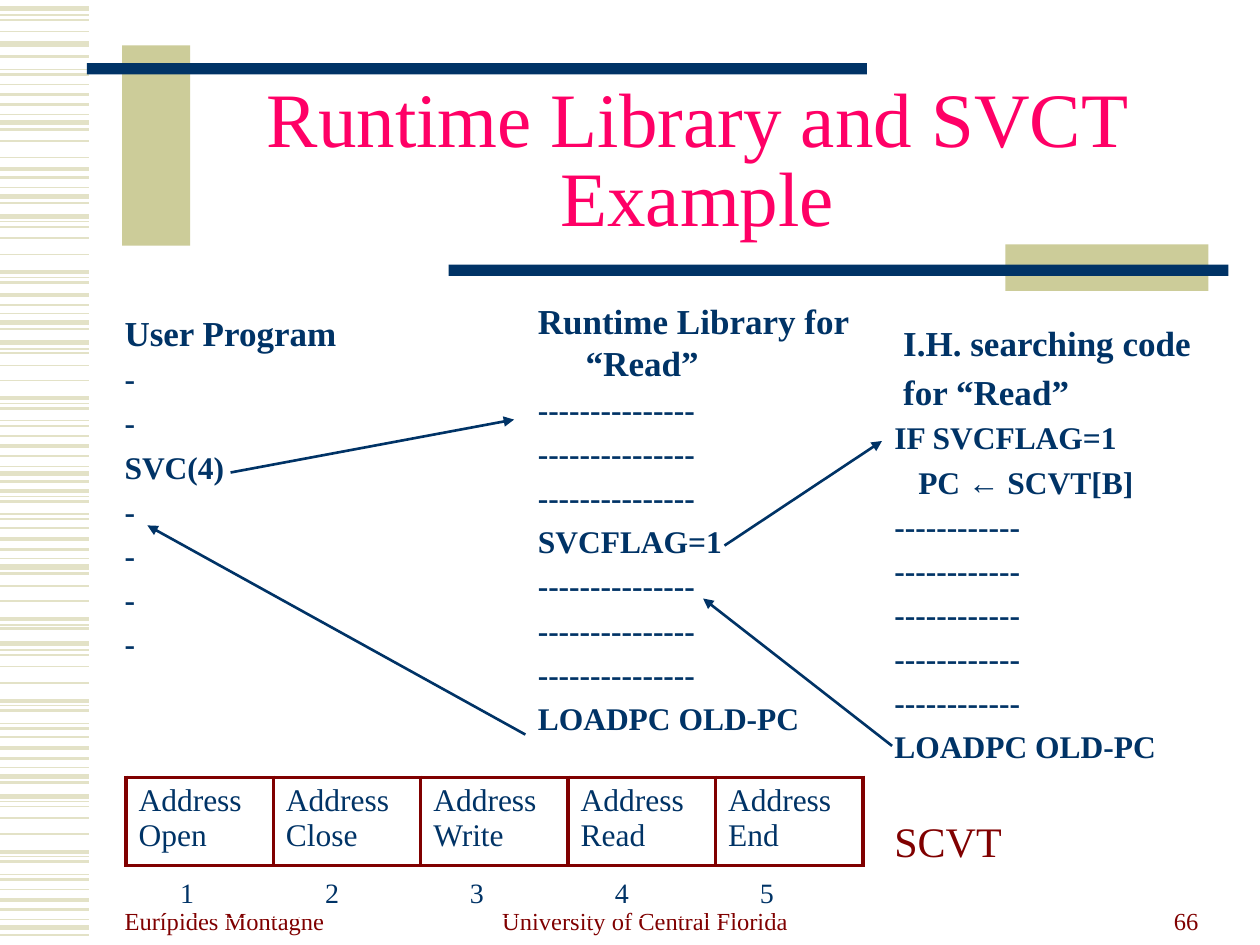
"""Build the slide on the runtime library and the SVCT example."""
from dataclasses import dataclass

from lxml.etree import SubElement
from pptx import Presentation
from pptx.dml.color import RGBColor
from pptx.enum.shapes import MSO_CONNECTOR as Connector, MSO_SHAPE as Shape
from pptx.enum.text import MSO_ANCHOR as Anchor, PP_ALIGN as Align
from pptx.oxml.ns import qn
from pptx.util import Inches, Pt


@dataclass(frozen=True)
class Theme:
    font: str = "Times New Roman"
    navy: str = "003366"
    maroon: str = "800000"
    pink: str = "FF0066"
    khaki: str = "CCCC99"
    pale: str = "E3E2C7"
    white: str = "FFFFFF"
    title: float = 44
    label: float = 24
    heading: float = 20
    code: float = 18
    index: float = 16
    footer: float = 14


@dataclass(frozen=True)
class Bar:
    left: float
    top: float
    width: float
    height: float
    color: str


@dataclass(frozen=True)
class Caption:
    text: str
    left: float
    top: float
    width: float
    height: float
    size: float
    color: str
    align: Align = Align.LEFT
    anchor: Anchor = Anchor.TOP
    line_spacing: float | None = None
    space_before: int = 0


@dataclass(frozen=True)
class Line:
    text: str
    size: float = Theme.code
    offset: float = 0


@dataclass(frozen=True)
class Listing:
    left: float
    top: float
    width: float
    height: float
    lines: list[Line]


@dataclass(frozen=True)
class Grid:
    left: float
    top: float
    column: float
    row: float
    labels: list[str]
    size: float
    border: str
    weight: float


@dataclass(frozen=True)
class Arrow:
    start: tuple[float, float]
    end: tuple[float, float]


THEME = Theme()
HANGING = 0.38
STRIPE_WIDTH = 0.71
STRIPES = {
    0.75: [0.12, 0.55, 0.91, 1.49, 1.76, 2.2, 2.49, 2.77, 3.2, 3.34, 3.7, 3.94,
           4.08, 4.43, 4.96, 5.16, 5.6, 5.74, 6.09, 6.36, 6.8, 6.94, 7.3],
    1: [0.16, 0.25, 0.67, 1.12, 1.25, 1.8, 1.89, 2.02, 2.8, 2.9, 3.02, 3.46,
        4.19, 4.65, 4.77, 5.2, 5.29, 5.42, 5.85, 6.4, 6.49, 6.62, 7.06],
    1.5: [0.45, 0.59, 0.83, 1.03, 1.41, 1.61, 2.24, 2.42, 2.61, 3.24, 3.38, 3.62, 3.82,
          3.98, 4.12, 4.36, 4.55, 4.99, 5.64, 5.78, 6.02, 6.21, 6.84, 6.98, 7.22, 7.42],
    2.25: [0.75, 1.34, 2.16, 2.34, 3.16, 3.54, 3.9, 4.28, 4.91, 5.56, 5.94, 6.76, 7.14],
    3: [0.07, 0.35, 0.97, 1.56, 1.72, 2.56, 2.72, 3.76, 4.5, 5.11, 6.16, 6.32, 7.36],
}
BARS = [
    Bar(0.97, 0.36, 0.54, 1.59, THEME.khaki),
    Bar(0.69, 0.5, 6.19, 0.09, THEME.navy),
    Bar(7.98, 1.94, 1.61, 0.37, THEME.khaki),
    Bar(3.56, 2.1, 6.19, 0.09, THEME.navy),
]
CAPTIONS = [
    Caption("Eurípides Montagne", 0.89, 6.97, 2.08, 0.5, THEME.footer, THEME.maroon,
            anchor=Anchor.BOTTOM),
    Caption("University of Central Florida", 3.43, 6.97, 3.38, 0.5, THEME.footer,
            THEME.maroon, Align.CENTER, Anchor.BOTTOM),
    Caption("66", 7.21, 6.97, 2.4, 0.5, THEME.footer, THEME.maroon, Align.RIGHT,
            Anchor.BOTTOM),
    Caption("Runtime Library and SVCT Example", 1.5, 0.67, 8.07, 1.25, THEME.title,
            THEME.pink, Align.CENTER, Anchor.MIDDLE, 0.85),
    Caption("SCVT", 7, 6.42, 1.75, 0.5, THEME.label, THEME.maroon, space_before=50),
]
DASH = Line("-")
LONG_RULE = Line("-" * 15)
SHORT_RULE = Line("-" * 12)
LOAD = Line("LOADPC OLD-PC")
LISTINGS = [
    Listing(0.89, 2.42, 2.7, 3.24, [
        Line("User Program", THEME.heading), *[DASH] * 2, Line("SVC(4)"), *[DASH] * 4]),
    Listing(4.17, 2.33, 2.68, 4.24, [
        Line("Runtime Library for “Read”", THEME.heading), *[LONG_RULE] * 3,
        Line("SVCFLAG=1"), *[LONG_RULE] * 3, LOAD]),
    Listing(7, 2.5, 2.68, 4.24, [
        Line("I.H. searching code", THEME.heading, 0.07),
        Line("for “Read”", THEME.heading, 0.07), Line("IF SVCFLAG=1"),
        Line("PC ← SCVT[B]", offset=0.19), *[SHORT_RULE] * 5, LOAD]),
]
ACTIONS = ["Open", "Close", "Write", "Read", "End"]
GRIDS = [
    Grid(1, 6.17, 1.17, 0.7, [f"Address {action}" for action in ACTIONS], THEME.code,
         THEME.maroon, 2.25),
    Grid(1.33, 6.92, 1.15, 0.37, [str(number + 1) for number in range(len(ACTIONS))],
         THEME.index, THEME.white, 1),
]
ARROWS = [
    Arrow((1.83, 3.75), (4.08, 3.33)),
    Arrow((5.75, 4.33), (7, 3.5)),
    Arrow((7.08, 5.92), (5.58, 4.75)),
    Arrow((4.17, 5.83), (1.17, 4.17)),
]


def style_para(para, size: float, color: str, before: int = 0, bold: bool = False) -> None:
    """Format the runs and set the space before as a percentage."""
    for span in para.runs:
        span.font.name, span.font.size, span.font.bold = THEME.font, Pt(size), bold
        span.font.color.rgb = RGBColor.from_string(color)
    if before:
        para.space_before = Pt(0)
        spacing = para._p.pPr.find(qn("a:spcBef"))
        spacing.remove(spacing[0])
        SubElement(spacing, qn("a:spcPct"), val=str(before * 1000))


def draw_line(page, start: tuple, end: tuple, color: str, weight: float):
    """Draw a straight line without a shadow."""
    line = page.shapes.add_connector(Connector.STRAIGHT, *map(Inches, (*start, *end)))
    line.line.color.rgb = RGBColor.from_string(color)
    line.line.width = Pt(weight)
    SubElement(line._element.spPr, qn("a:effectLst"))
    return line


def draw_arrow(page, arrow: Arrow) -> None:
    """Draw a line with a triangular head at its end."""
    line = draw_line(page, arrow.start, arrow.end, THEME.navy, 1.5)
    SubElement(line.line._get_or_add_ln(), qn("a:tailEnd"), type="triangle")


def draw_bar(page, bar: Bar) -> None:
    """Draw a plain filled rectangle."""
    shape = page.shapes.add_shape(
        Shape.RECTANGLE, *map(Inches, (bar.left, bar.top, bar.width, bar.height)))
    shape.shadow.inherit = False
    shape.fill.solid()
    shape.fill.fore_color.rgb = RGBColor.from_string(bar.color)
    shape.line.fill.background()


def add_frame(page, area: Caption | Listing):
    """Add a wrapping text box and return its frame."""
    box = page.shapes.add_textbox(
        *map(Inches, (area.left, area.top, area.width, area.height)))
    box.text_frame.word_wrap = True
    return box.text_frame


def draw_caption(page, caption: Caption) -> None:
    """Draw a single paragraph of text."""
    frame = add_frame(page, caption)
    frame.vertical_anchor = caption.anchor
    frame.text = caption.text
    para = frame.paragraphs[0]
    para.alignment, para.line_spacing = caption.align, caption.line_spacing
    style_para(para, caption.size, caption.color, caption.space_before)


def draw_listing(page, listing: Listing) -> None:
    """Draw a column of bold lines with a hanging indent."""
    frame = add_frame(page, listing)
    frame.text = "\n".join(line.text for line in listing.lines)
    for para, line in zip(frame.paragraphs, listing.lines):
        properties = para._p.get_or_add_pPr()
        properties.set("marL", str(Inches(HANGING)))
        properties.set("indent", str(Inches(line.offset - HANGING)))
        style_para(para, line.size, THEME.navy, 20, True)


def draw_grid(page, grid: Grid) -> None:
    """Draw a one-row table with a border around every cell."""
    count = len(grid.labels)
    table = page.shapes.add_table(1, count, *map(
        Inches, (grid.left, grid.top, grid.column * count, grid.row))).table
    table.first_row = table.horz_banding = False
    for cell, label in zip(table.rows[0].cells, grid.labels):
        cell.text = label
        style_para(cell.text_frame.paragraphs[0], grid.size, THEME.navy, 20)
        cell.fill.background()
        properties = cell._tc.get_or_add_tcPr()
        for position, side in enumerate("LRTB"):
            edge = SubElement(properties, qn(f"a:ln{side}"), w=str(Pt(grid.weight)))
            SubElement(SubElement(edge, qn("a:solidFill")), qn("a:srgbClr"), val=grid.border)
            properties.insert(position, edge)


def main() -> None:
    """Build the deck and save it."""
    deck = Presentation()
    deck.slide_width, deck.slide_height = Inches(10), Inches(7.5)
    page = deck.slides.add_slide(deck.slide_layouts[6])
    for weight, heights in STRIPES.items():
        for height in heights:
            draw_line(page, (0, height), (STRIPE_WIDTH, height), THEME.pale, weight)
    for draw, items in ((draw_bar, BARS), (draw_caption, CAPTIONS), (draw_listing, LISTINGS),
                        (draw_grid, GRIDS), (draw_arrow, ARROWS)):
        for item in items:
            draw(page, item)
    deck.save("out.pptx")


if __name__ == "__main__":
    main()
